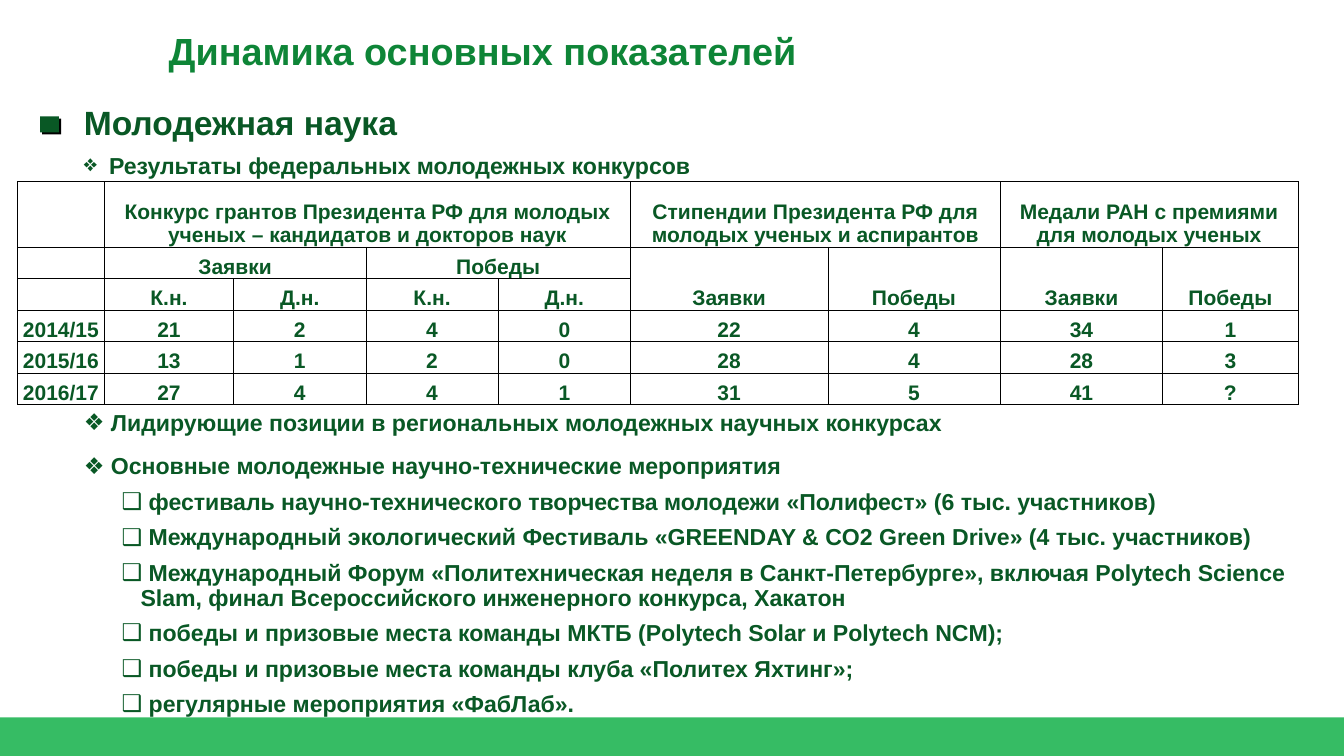
import pptx
import pptx.util
import pptx.dml.color
import pptx.enum.shapes
import pptx.enum.text
import pptx.oxml
import pptx.oxml.ns

Pt = pptx.util.Pt
RGB = pptx.dml.color.RGBColor
ALIGN = pptx.enum.text.PP_ALIGN
ANCHOR = pptx.enum.text.MSO_ANCHOR
RECT = pptx.enum.shapes.MSO_SHAPE.RECTANGLE
NS = pptx.oxml.ns.nsdecls("a")

DARK = RGB(0x09, 0x58, 0x25)
GREEN = RGB(0x0E, 0x85, 0x37)
BAND = RGB(0x13, 0xB1, 0x4A)
FONT = "Arial"
WIDE, HIGH = 1280, 720

TITLE = "Динамика основных показателей"
TOPIC = "Молодежная наука"
RESULT = " Результаты федеральных молодежных конкурсов"

# (row, column, rows spanned, columns spanned, text)
HEADS = [
    (0, 1, 1, 4, "Конкурс грантов Президента РФ для молодых ученых – кандидатов и докторов наук"),
    (0, 5, 1, 2, "Стипендии Президента РФ для молодых ученых и аспирантов"),
    (0, 7, 1, 2, "Медали РАН с премиями для молодых ученых"),
    (1, 1, 1, 2, "Заявки"),
    (1, 3, 1, 2, "Победы"),
    (1, 5, 2, 1, "Заявки"),
    (1, 6, 2, 1, "Победы"),
    (1, 7, 2, 1, "Заявки"),
    (1, 8, 2, 1, "Победы"),
    (2, 1, 1, 1, "К.н."),
    (2, 2, 1, 1, "Д.н."),
    (2, 3, 1, 1, "К.н."),
    (2, 4, 1, 1, "Д.н."),
]
YEARS = [
    ("2014/15", "21", "2", "4", "0", "22", "4", "34", "1"),
    ("2015/16", "13", "1", "2", "0", "28", "4", "28", "3"),
    ("2016/17", "27", "4", "4", "1", "31", "5", "41", "?"),
]
COLS = [82.8, 123.1, 126, 126, 126, 187.9, 164.2, 154.8, 128.9]
ROWS = [62.6] + [30] * 5

# (level, space before, text)
EVENTS = [
    (0, 0, " Лидирующие позиции в региональных молодежных научных конкурсах"),
    (0, 18, " Основные молодежные научно-технические мероприятия"),
    (1, 10, " фестиваль научно-технического творчества молодежи «Полифест» (6 тыс. участников)"),
    (1, 10, " Международный экологический Фестиваль «GREENDAY & CO2 Green Drive» (4 тыс. участников)"),
    (1, 10, " Международный Форум «Политехническая неделя в Санкт-Петербурге», включая "
            "Polytech Science Slam, финал Всероссийского инженерного конкурса, Хакатон"),
    (1, 10, " победы и призовые места команды МКТБ (Polytech Solar и Polytech NCM);"),
    (1, 10, " победы и призовые места команды клуба «Политех Яхтинг»;"),
    (1, 10, " регулярные мероприятия «ФабЛаб»."),
]
MARKS = ["❖", "❑"]
INDENTS = [18, 54]


def write(para, text, size, color=DARK):
    run = para.add_run()
    run.text = text
    run.font.name = FONT
    run.font.size = Pt(size)
    run.font.bold = True
    run.font.color.rgb = color


def place(shape, left, top, width, height):
    shape.left, shape.top = Pt(left), Pt(top)
    shape.width, shape.height = Pt(width), Pt(height)


def bullet(para, level):
    props = para._p.get_or_add_pPr()
    props.set("marL", str(Pt(INDENTS[level])))
    props.set("indent", str(-Pt(18)))
    props.append(pptx.oxml.parse_xml(f'<a:buChar {NS} char="{MARKS[level]}"/>'))


def block(slide, left, top, width, height, color):
    shape = slide.shapes.add_shape(RECT, Pt(left), Pt(top), Pt(width), Pt(height))
    shape.shadow.inherit = False
    shape.fill.solid()
    shape.fill.fore_color.rgb = color
    shape.line.fill.background()
    return shape


def label(slide, left, top, width, height):
    """Add an empty text box and return its first paragraph."""
    box = slide.shapes.add_textbox(Pt(left), Pt(top), Pt(width), Pt(height))
    box.text_frame.word_wrap = True
    return box.text_frame.paragraphs[0]


def border(cell):
    props = cell._tc.get_or_add_tcPr()
    for spot, side in enumerate("LRTB"):
        props.insert(spot, pptx.oxml.parse_xml(
            f'<a:ln{side} {NS} w="{Pt(0.5)}"><a:solidFill><a:srgbClr val="000000"/>'
            f'</a:solidFill></a:ln{side}>'))


def add_grid(slide):
    frame = slide.shapes.add_table(
        len(ROWS), len(COLS), Pt(16.6), Pt(172.8), Pt(sum(COLS)), Pt(sum(ROWS)))
    table = frame.table
    table.first_row = table.horz_banding = False
    for col, width in zip(table.columns, COLS):
        col.width = Pt(width)
    for row, height in zip(table.rows, ROWS):
        row.height = Pt(height)
    for cell in table.iter_cells():
        cell.fill.background()
        cell.vertical_anchor = ANCHOR.BOTTOM
        cell.margin_left = cell.margin_right = 0
        cell.margin_top = cell.margin_bottom = 0
        border(cell)
    data = [(row, col, 1, 1, text)
            for row, year in enumerate(YEARS, 3) for col, text in enumerate(year)]
    for row, col, down, over, text in HEADS + data:
        cell = table.cell(row, col)
        if down * over > 1:
            cell.merge(table.cell(row + down - 1, col + over - 1))
        para = cell.text_frame.paragraphs[0]
        para.alignment = ALIGN.CENTER
        if row and col:
            para.line_spacing = Pt(21.6)
        write(para, text, 20)


def add_list(body):
    place(body, 72.7, 388, 1185, 291)
    frame = body.text_frame
    frame.auto_size = pptx.enum.text.MSO_AUTO_SIZE.NONE
    for spot, (level, gap, text) in enumerate(EVENTS):
        para = frame.add_paragraph() if spot else frame.paragraphs[0]
        para.level = level
        bullet(para, level)
        para.line_spacing = 0.9
        para.space_before = Pt(gap)
        write(para, text, 22)


def main():
    deck = pptx.Presentation()
    deck.slide_width, deck.slide_height = Pt(WIDE), Pt(HIGH)
    slide = deck.slides.add_slide(deck.slide_layouts[1])

    band = block(slide, 0, 683.3, WIDE, HIGH - 683.3, BAND)
    tint = band.fill._xPr.find(".//" + pptx.oxml.ns.qn("a:srgbClr"))
    tint.append(pptx.oxml.parse_xml(f'<a:alpha {NS} val="85000"/>'))

    mark = block(slide, 38.2, 110.9, 18, 15.1, DARK)
    shade = mark._element.spPr.find(pptx.oxml.ns.qn("a:effectLst"))
    shade.append(pptx.oxml.parse_xml(
        f'<a:outerShdw {NS} dist="{Pt(2.8)}" dir="2700000" algn="ctr" rotWithShape="0">'
        '<a:srgbClr val="000000"/></a:outerShdw>'))

    title = slide.shapes.title
    place(title, 153.4, 8, 1116, 80)
    title.text_frame.vertical_anchor = ANCHOR.MIDDLE
    head = title.text_frame.paragraphs[0]
    head.alignment = ALIGN.LEFT
    write(head, TITLE, 36, GREEN)

    write(label(slide, 72.7, 93.6, 970, 46), TOPIC, 32)
    para = label(slide, 72.7, 141, 828, 33)
    bullet(para, 0)
    write(para, RESULT, 22)
    add_grid(slide)
    add_list(slide.placeholders[1])
    deck.save("out.pptx")


if __name__ == "__main__":
    main()
